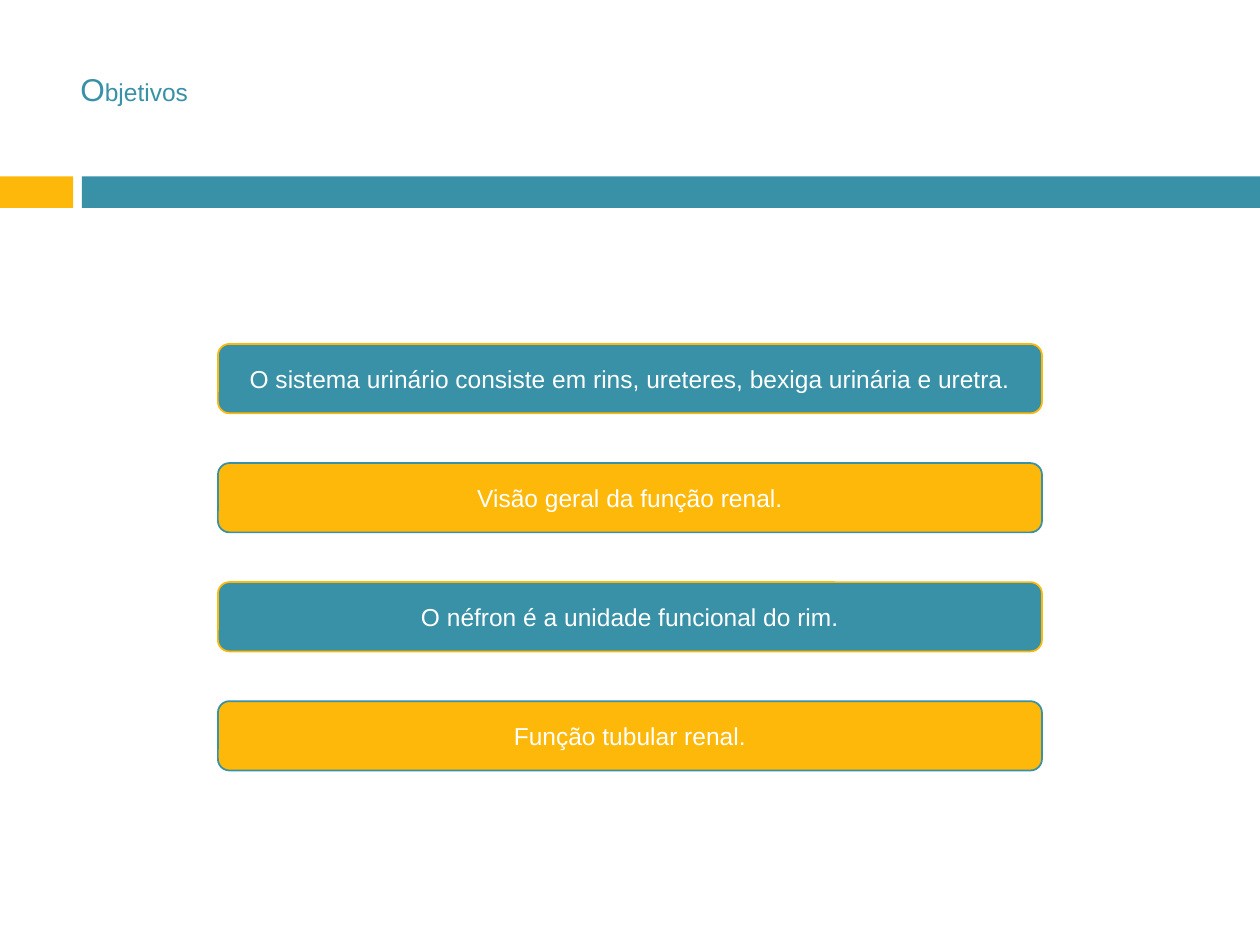
from pptx import Presentation
from pptx.dml.color import RGBColor as RGB
from pptx.enum.shapes import MSO_SHAPE as Shape
from pptx.enum.text import MSO_ANCHOR as Anchor, MSO_AUTO_SIZE as Fit, PP_ALIGN as Align
from pptx.util import Inches, Pt

COLORS = {"teal": "3891A7", "gold": "FEB80A", "white": "FFFFFF"}
TITLE = [("O", 18), ("bjetivos", 14)]
GOALS = [
    "O sistema urinário consiste em rins, ureteres, bexiga urinária e uretra.",
    "Visão geral da função renal.",
    "O néfron é a unidade funcional do rim.",
    "Função tubular renal.",
]
BANDS = [("gold", 0, 0.58), ("teal", 0.65, 9.35)]
LEFT, TOP, WIDTH, HEIGHT, STEP = 1.73, 2.73, 6.54, 0.55, 0.945


def color(name):
    return RGB.from_string(COLORS[name])


def write(frame, runs, tone="white", anchor=Anchor.MIDDLE):
    """Fill a frame with one centred paragraph of (text, size) runs."""
    frame.word_wrap = True
    frame.vertical_anchor = anchor
    para = frame.paragraphs[0]
    para.alignment = Align.CENTER
    for text, size in runs:
        run = para.add_run()
        run.text = text
        run.font.name = "Arial"
        run.font.size = Pt(size)
        run.font.color.rgb = color(tone)


def add_box(slide, kind, at, fill, line=None):
    box = slide.shapes.add_shape(kind, *map(Inches, at))
    box.shadow.inherit = False
    box.fill.solid()
    box.fill.fore_color.rgb = color(fill)
    if line:
        box.line.color.rgb = color(line)
        box.line.width = Pt(1)
    else:
        box.line.fill.background()
    return box


def main():
    deck = Presentation()
    deck.slide_width, deck.slide_height = Inches(10), Inches(7.5)
    slide = deck.slides.add_slide(deck.slide_layouts[6])

    for fill, left, width in BANDS:
        add_box(slide, Shape.RECTANGLE, (left, 1.4, width, 0.25), fill)

    title = slide.shapes.add_textbox(*map(Inches, (0.12, 0.51, 1.89, 0.4)))
    write(title.text_frame, TITLE, tone="teal", anchor=Anchor.TOP)
    title.text_frame.auto_size = Fit.SHAPE_TO_FIT_TEXT

    for i, goal in enumerate(GOALS):
        fill, line = ("gold", "teal") if i % 2 else ("teal", "gold")
        at = (LEFT, TOP + i * STEP, WIDTH, HEIGHT)
        box = add_box(slide, Shape.ROUNDED_RECTANGLE, at, fill, line)
        write(box.text_frame, [(goal, 14)])

    deck.save("out.pptx")


if __name__ == "__main__":
    main()
